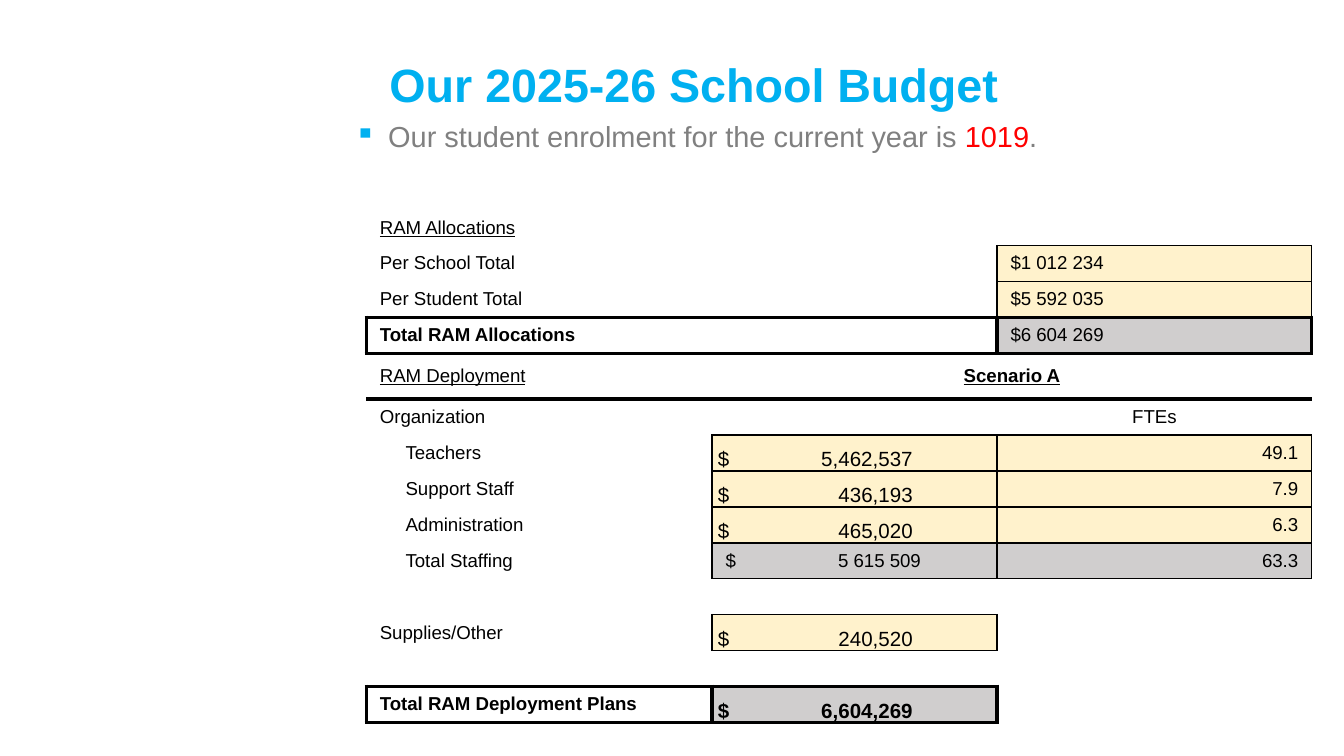
from dataclasses import dataclass, field
from lxml.etree import SubElement as Sub
from pptx import Presentation
from pptx.dml.color import RGBColor
from pptx.enum.text import MSO_ANCHOR as Anchor, PP_ALIGN as Align
from pptx.oxml.ns import qn
from pptx.util import Pt

BLACK, BLUE, GREY, RED = "000000", "00B0F0", "808080", "FF0000"
CREAM, SILVER = "FFF2CC", "D0CECE"
THIN, THICK = 1, 2.25
WIDTHS = [185.3, 152.6, 168.5]
HEIGHTS = [19.2] * 4 + [24.5] + [19.2] * 9


@dataclass
class Entry:
    row: int
    col: int
    text: str
    fill: str = ""
    tab: bool = False
    font: dict = field(default_factory=dict)
    look: dict = field(default_factory=dict)


@dataclass
class Frame:
    top: int
    left: int
    end: int
    right: int
    width: float


BOLD, LINED = {"bold": True}, {"underline": True}
INDENT = {"margin_left": Pt(21)}
LOW = {"vertical_anchor": Anchor.BOTTOM, "margin_left": Pt(3),
       "margin_right": 0, "margin_top": 0, "margin_bottom": 0}


def money(row: int, text: str, fill: str = CREAM, **font) -> Entry:
    return Entry(row, 1, "$\t" + text, fill, True, {"size": Pt(11), **font}, LOW)


ENTRIES = [
    Entry(0, 0, "RAM Allocations", font=LINED),
    Entry(1, 0, "Per School Total"),
    Entry(1, 2, "$1 012 234", CREAM),
    Entry(2, 0, "Per Student Total"),
    Entry(2, 2, "$5 592 035", CREAM),
    Entry(3, 0, "Total RAM Allocations", font=BOLD),
    Entry(3, 2, "$6 604 269", SILVER),
    Entry(4, 0, "RAM Deployment", font=LINED),
    Entry(4, 1, "Scenario A", font=BOLD | LINED),
    Entry(5, 0, "Organization"),
    Entry(5, 2, "FTEs"),
    Entry(6, 0, "Teachers", look=INDENT),
    money(6, "5,462,537"),
    Entry(6, 2, "49.1", CREAM),
    Entry(7, 0, "Support Staff", look=INDENT),
    money(7, "436,193"),
    Entry(7, 2, "7.9", CREAM),
    Entry(8, 0, "Administration", look=INDENT),
    money(8, "465,020"),
    Entry(8, 2, "6.3", CREAM),
    Entry(9, 0, "Total Staffing", look=INDENT),
    Entry(9, 1, "$\t5 615 509", SILVER, True),
    Entry(9, 2, "63.3", SILVER),
    Entry(11, 0, "Supplies/Other"),
    money(11, "240,520"),
    Entry(13, 0, "Total RAM Deployment Plans", font=BOLD),
    money(13, "6,604,269", SILVER, bold=True),
]
ALIGNS = {(4, 1): Align.CENTER, (5, 2): Align.CENTER}
ALIGNS |= {(row, 2): Align.RIGHT for row in range(6, 10)}

FRAMES = [Frame(row, 2, row + 1, 3, THIN) for row in (1, 2)]
FRAMES += [Frame(row, col, row + 1, col + 1, THIN)
           for row in range(6, 10) for col in (1, 2)]
FRAMES += [
    Frame(11, 1, 12, 2, THIN),
    Frame(3, 0, 4, 2, THICK),
    Frame(3, 2, 4, 3, THICK),
    Frame(5, 0, 5, 3, THICK),
    Frame(13, 0, 14, 1, THICK),
    Frame(13, 1, 14, 2, THICK),
]


def paint(target, tint: str) -> None:
    target.rgb = RGBColor.from_string(tint)


def assign(target, values: dict) -> None:
    for name, value in values.items():
        setattr(target, name, value)


def write(para, text: str, size: float, tint: str, **font) -> None:
    run = para.add_run()
    run.text = text
    assign(run.font, {"name": "Arial", "size": Pt(size), **font})
    paint(run.font.color, tint)


def add_text(slide, box: list[float], margins: dict):
    frame = slide.shapes.add_textbox(*map(Pt, box)).text_frame
    assign(frame, {"word_wrap": True, **margins})
    para = frame.paragraphs[0]
    para.line_spacing = 0.9
    return para


def find_edges() -> dict:
    edges = {}
    for box in FRAMES:
        for col in range(box.left, box.right):
            edges["h", box.top, col] = edges["h", box.end, col] = box.width
        for row in range(box.top, box.end):
            edges["v", row, box.left] = edges["v", row, box.right] = box.width
    return edges


def draw_edge(cell, tag: str, width: float) -> None:
    line = Sub(cell._tc.get_or_add_tcPr(), qn(tag), w=str(Pt(width)))
    if width:
        Sub(Sub(line, qn("a:solidFill")), qn("a:srgbClr"), val=BLACK)
    else:
        Sub(line, qn("a:noFill"))


def fill_cell(cell, entry: Entry) -> None:
    assign(cell, entry.look)
    para = cell.text_frame.paragraphs[0]
    para.alignment = ALIGNS.get((entry.row, entry.col), Align.LEFT)
    if entry.tab:
        tabs = Sub(para._p.get_or_add_pPr(), qn("a:tabLst"))
        Sub(tabs, qn("a:tab"), pos=str(Pt(104.5)), algn="r")
    if entry.text:
        write(para, entry.text, **{"size": 10, "tint": BLACK})
        assign(para.runs[0].font, entry.font)
    else:
        Sub(para._p, qn("a:endParaRPr"), sz="1000")
    if entry.fill:
        cell.fill.solid()
        paint(cell.fill.fore_color, entry.fill)
    else:
        cell.fill.background()


def add_budget(slide) -> None:
    table = slide.shapes.add_table(
        len(HEIGHTS), len(WIDTHS), Pt(196.3), Pt(112.3),
        Pt(sum(WIDTHS)), Pt(sum(HEIGHTS))).table
    assign(table, {"first_row": False, "horz_banding": False})
    for column, width in zip(table.columns, WIDTHS):
        column.width = Pt(width)
    table.cell(0, 0).merge(table.cell(0, 2))
    table.cell(4, 1).merge(table.cell(4, 2))
    edges = find_edges()
    found = {(entry.row, entry.col): entry for entry in ENTRIES}
    for row, height in enumerate(HEIGHTS):
        table.rows[row].height = Pt(height)
        for col in range(len(WIDTHS)):
            cell = table.cell(row, col)
            cell.vertical_anchor = Anchor.MIDDLE
            sides = {"a:lnL": ("v", row, col), "a:lnR": ("v", row, col + 1),
                     "a:lnT": ("h", row, col), "a:lnB": ("h", row + 1, col)}
            for tag, key in sides.items():
                draw_edge(cell, tag, edges.get(key, 0))
            fill_cell(cell, found.get((row, col), Entry(row, col, "")))


def add_intro(slide) -> None:
    para = add_text(slide, [185, 42.5, 517, 301.7], {
        "margin_left": Pt(5), "margin_right": Pt(5),
        "margin_top": Pt(32.6), "margin_bottom": Pt(3)})
    props = para._p.get_or_add_pPr()
    props.set("marL", str(Pt(18)))
    props.set("indent", str(Pt(-18)))
    Sub(Sub(props, qn("a:buClr")), qn("a:srgbClr"), val=BLUE)
    Sub(props, qn("a:buChar"), char="▪")
    write(para, "Our student enrolment for the current year is ", 15.5, GREY)
    write(para, "1019", 15.5, RED)
    write(para, ".", 15.5, "7F7F7F")


def main() -> None:
    deck = Presentation()
    assign(deck, {"slide_width": Pt(720), "slide_height": Pt(405)})
    slide = deck.slides.add_slide(deck.slide_layouts[6])
    add_intro(slide)
    add_budget(slide)
    title = add_text(slide, [201.6, 27.4, 518.4, 56.2], {"margin_top": Pt(6)})
    write(title, "Our 2025-26 School Budget", 25, BLUE, bold=True)
    deck.save("out.pptx")


if __name__ == "__main__":
    main()
